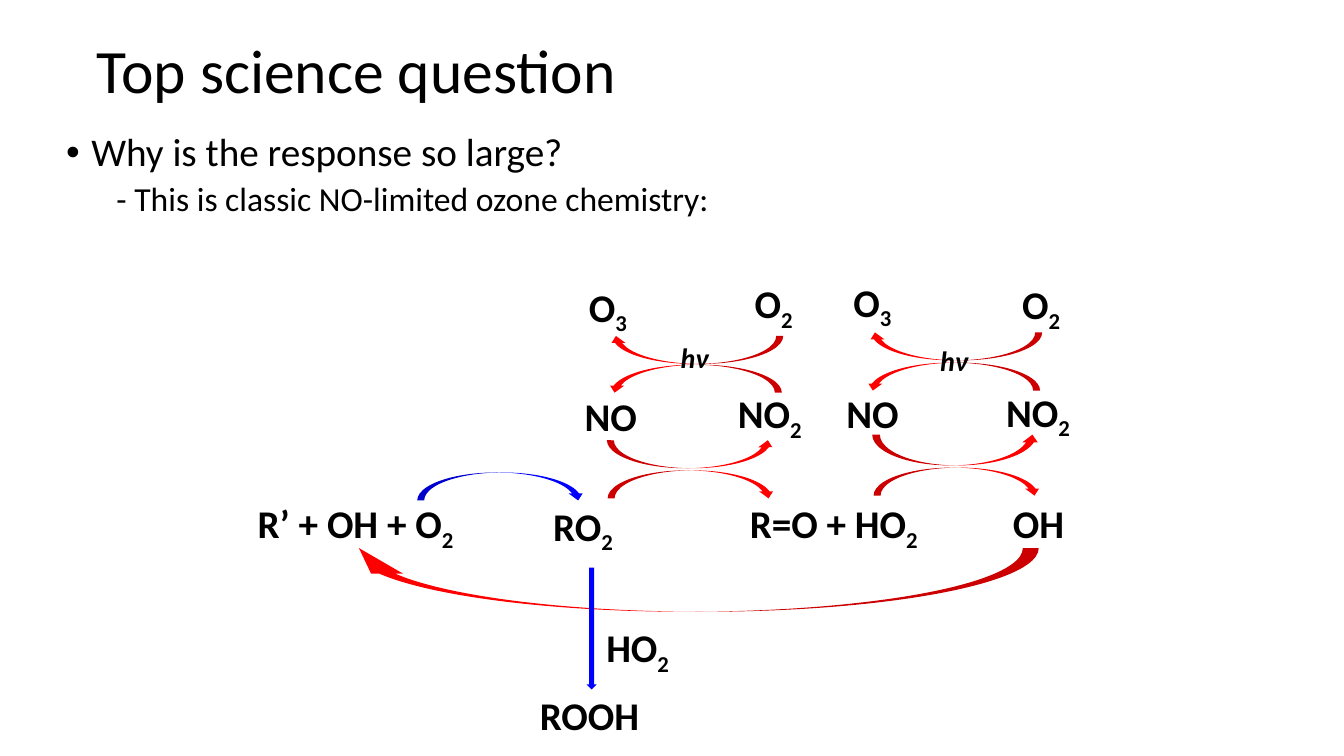
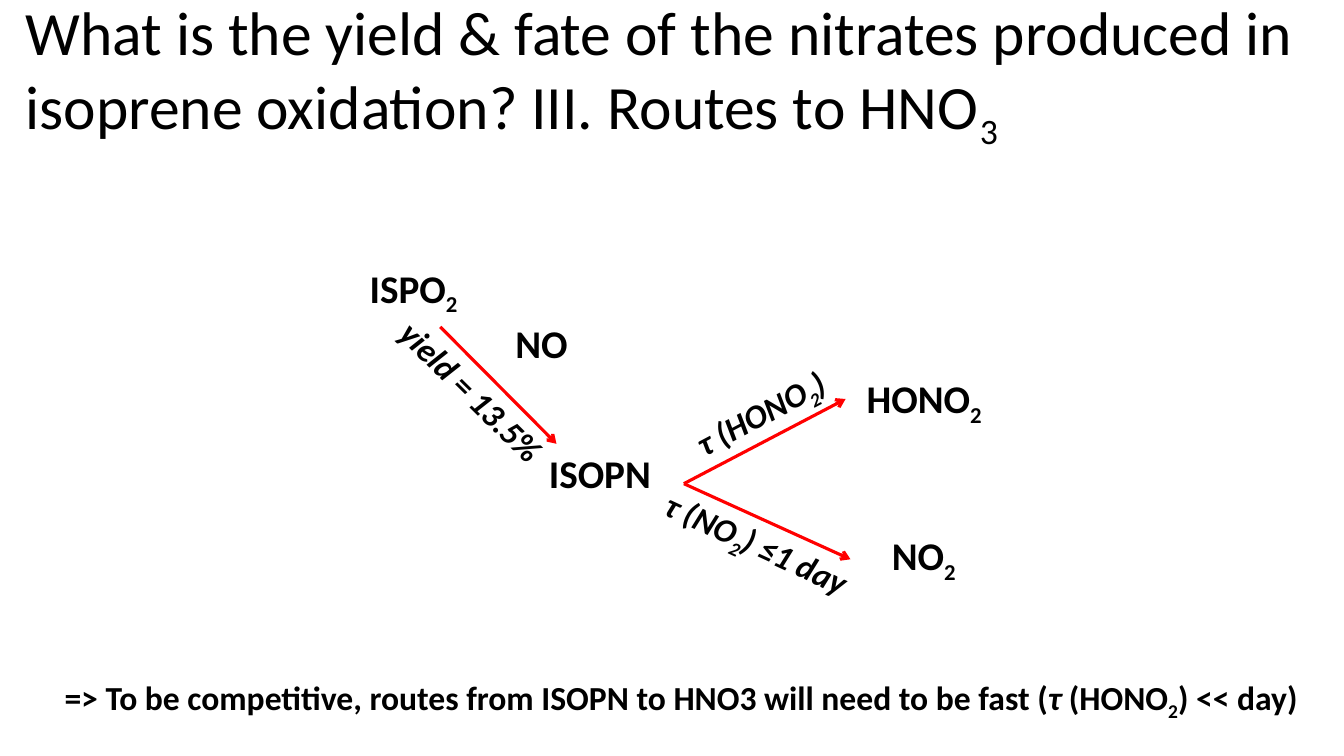
from lxml import etree
from pptx import Presentation
from pptx.dml.color import RGBColor
from pptx.enum.shapes import MSO_CONNECTOR, MSO_SHAPE
from pptx.enum.text import MSO_ANCHOR, MSO_AUTO_SIZE, PP_ALIGN
from pptx.oxml.ns import qn
from pptx.util import Pt

STRAIGHT = MSO_CONNECTOR.STRAIGHT
CURVED_ARROW, DOWN_ARROW = MSO_SHAPE.CURVED_DOWN_ARROW, MSO_SHAPE.DOWN_ARROW
MIDDLE, LEFT = MSO_ANCHOR.MIDDLE, PP_ALIGN.LEFT
NO_FIT, GROW = MSO_AUTO_SIZE.NONE, MSO_AUTO_SIZE.SHAPE_TO_FIT_TEXT
COLOURS = {"text": "000000", "red": "FF0000", "blue": "0000FF"}
FONT = "Calibri"
LINE_HEIGHTS = {20: 32, 24: 36, 28: 41}


def add_formula(para, text, size, bold=True, italic=False):
    """Append text to a paragraph; the character after each "_" is a subscript."""
    first, *others = text.split("_")
    pieces = [(first, False)]
    for other in others:
        pieces += [(other[0], True), (other[1:], False)]
    for piece, is_subscript in pieces:
        if not piece:
            continue
        span = para.add_run()
        span.text = piece
        font = span.font
        font.name, font.size, font.bold, font.italic = FONT, Pt(size), bold, italic
        font.color.rgb = RGBColor.from_string(COLOURS["text"])
        if is_subscript:
            font._element.set("baseline", "-25000")


def add_label(page, text, left, top, width, size=28, italic=False, rotation=0):
    box = page.shapes.add_textbox(Pt(left), Pt(top), Pt(width), Pt(LINE_HEIGHTS[size]))
    box.rotation = rotation
    box.text_frame.word_wrap = False
    box.text_frame.auto_size = GROW
    add_formula(box.text_frame.paragraphs[0], text, size, italic=italic)


deck = Presentation()
deck.slide_width, deck.slide_height = Pt(960), Pt(540)

# Titles: layout index, text, left, width
pages = []
for layout, text, left, width in [
    (1, "Top science question", 62, 828),
    (5, "What is the yield & fate of the nitrates produced in isoprene oxidation? "
        "III. Routes to HNO_3", 11, 949),
]:
    page = deck.slides.add_slide(deck.slide_layouts[layout])
    title = page.shapes.title
    title.left, title.top, title.width, title.height = Pt(left), Pt(0), Pt(width), Pt(104.4)
    title.text_frame.vertical_anchor = MIDDLE
    title.text_frame.auto_size = NO_FIT
    para = title.text_frame.paragraphs[0]
    para.alignment, para.line_spacing = LEFT, 0.9
    add_formula(para, text, 44, bold=False)
    pages.append(page)
question_page, routes_page = pages

# Question and answer
body = question_page.placeholders[1]
body.left, body.top, body.width, body.height = Pt(40), Pt(91.4), Pt(828), Pt(381)
frame = body.text_frame
frame.auto_size = NO_FIT
for level, text, size, margin, indent, space, bullet in [
    (0, "Why is the response so large?", 28, 18, -18, 0, "•"),
    (1, "- This is classic NO-limited ozone chemistry:", 24, 36, 0, 5, None),
]:
    para = frame.add_paragraph() if level else frame.paragraphs[0]
    para.level = level
    properties = para._p.get_or_add_pPr()
    properties.set("marL", str(Pt(margin)))
    properties.set("indent", str(Pt(indent)))
    if bullet:
        etree.SubElement(properties, qn("a:buChar")).set("char", bullet)
    else:
        etree.SubElement(properties, qn("a:buNone"))
    para.line_spacing, para.space_before = 0.9, Pt(space)
    add_formula(para, text, size, bold=False)

# Reaction cycle arrows: preset, left, top, width, height, flips, colour
for preset, left, top, width, height, flips, colour in [
    (CURVED_ARROW, 434, 336, 120, 20, "", "red"),
    (CURVED_ARROW, 624, 334, 120, 20, "", "red"),
    (CURVED_ARROW, 298, 337.5, 120, 20, "", "blue"),
    (CURVED_ARROW, 623, 310.5, 120, 22, "V", "red"),
    (CURVED_ARROW, 433.5, 314.5, 120, 20, "V", "red"),
    (CURVED_ARROW, 245, 391.5, 497, 45.5, "HV", "red"),
    (CURVED_ARROW, 618.5, 259, 124.5, 20, "H", "red"),
    (CURVED_ARROW, 620, 237.5, 124.5, 20, "HV", "red"),
    (CURVED_ARROW, 434, 260.5, 124.5, 20, "H", "red"),
    (CURVED_ARROW, 435, 240, 124.5, 20, "HV", "red"),
    (DOWN_ARROW, 419, 405.5, 7.2, 87, "", "blue"),
]:
    arrow = question_page.shapes.add_shape(preset, Pt(left), Pt(top), Pt(width), Pt(height))
    arrow.shadow.inherit = False
    arrow.fill.solid()
    arrow.fill.fore_color.rgb = RGBColor.from_string(COLOURS[colour])
    arrow.line.fill.background()
    for flip in flips:
        arrow._element.spPr.xfrm.set("flip" + flip, "1")
    if width > 400:
        arrow.adjustments[2] = 0.4

# Species in the cycle: text, left, top, width
for text, left, top, width in [
    ("O_3", 413.5, 198.5, 43),
    ("O_2", 532, 196, 43),
    ("O_3", 602.5, 195, 43),
    ("O_2", 723, 196.5, 43),
    ("NO", 410.5, 277, 52.5),
    ("NO_2", 520, 274.5, 62),
    ("NO", 597.5, 274.5, 52.5),
    ("NO_2", 711.5, 273.5, 62),
    ("R’ + OH + O_2", 177, 353, 157),
    ("RO_2", 388, 355, 59),
    ("R=O + HO_2", 528.5, 353, 137),
    ("OH", 716.5, 353, 52),
    ("HO_2", 426, 442, 61),
    ("ROOH", 378.5, 490.5, 86.5),
]:
    add_label(question_page, text, left, top, width)
for left, top in [(479, 240), (664.5, 242)]:
    add_label(question_page, "hν", left, top, 38, size=20, italic=True)

# Routes from ISPO2 to the products
for start_x, start_y, end_x, end_y in [
    (314.5, 233.5, 397.5, 317),
    (488.5, 345.5, 604, 285),
    (488.5, 345.5, 607.5, 399.5),
]:
    route = routes_page.shapes.add_connector(
        STRAIGHT, Pt(start_x), Pt(start_y), Pt(end_x), Pt(end_y))
    route.line.color.rgb = RGBColor.from_string(COLOURS["red"])
    route.line.width = Pt(2.25)
    etree.SubElement(route.line._get_or_add_ln(), qn("a:tailEnd")).set("type", "arrow")
    etree.SubElement(route._element.spPr, qn("a:effectLst"))

for text, left, top, width in [
    ("ISPO_2", 257, 185, 79),
    ("NO", 361, 224.5, 52.5),
    ("ISOPN", 385, 317.5, 88.5),
    ("HONO_2", 612, 264, 98.5),
    ("NO_2", 630, 376, 62),
]:
    add_label(routes_page, text, left, top, width)
for text, left, top, width, rotation in [
    ("yield = 13.5%", 263.5, 263.5, 151, 44.7),
    ("τ (NO_2) ≤1 day", 463, 371.5, 162, 24.8),
    ("τ (HONO_2)", 485.5, 275, 121.5, 332.2),
]:
    add_label(routes_page, text, left, top, width, size=24, italic=True, rotation=rotation)

# Conclusion
conclusion = routes_page.shapes.add_textbox(Pt(39), Pt(480), Pt(921), Pt(36))
conclusion.text_frame.word_wrap = True
conclusion.text_frame.auto_size = GROW
para = conclusion.text_frame.paragraphs[0]
for text, italic in [
    ("=> To be competitive, routes from ISOPN to HNO3 will need to be fast (", False),
    ("τ ", True),
    ("(HONO_2) << day)", False),
]:
    add_formula(para, text, 24, italic=italic)

deck.save("out.pptx")
